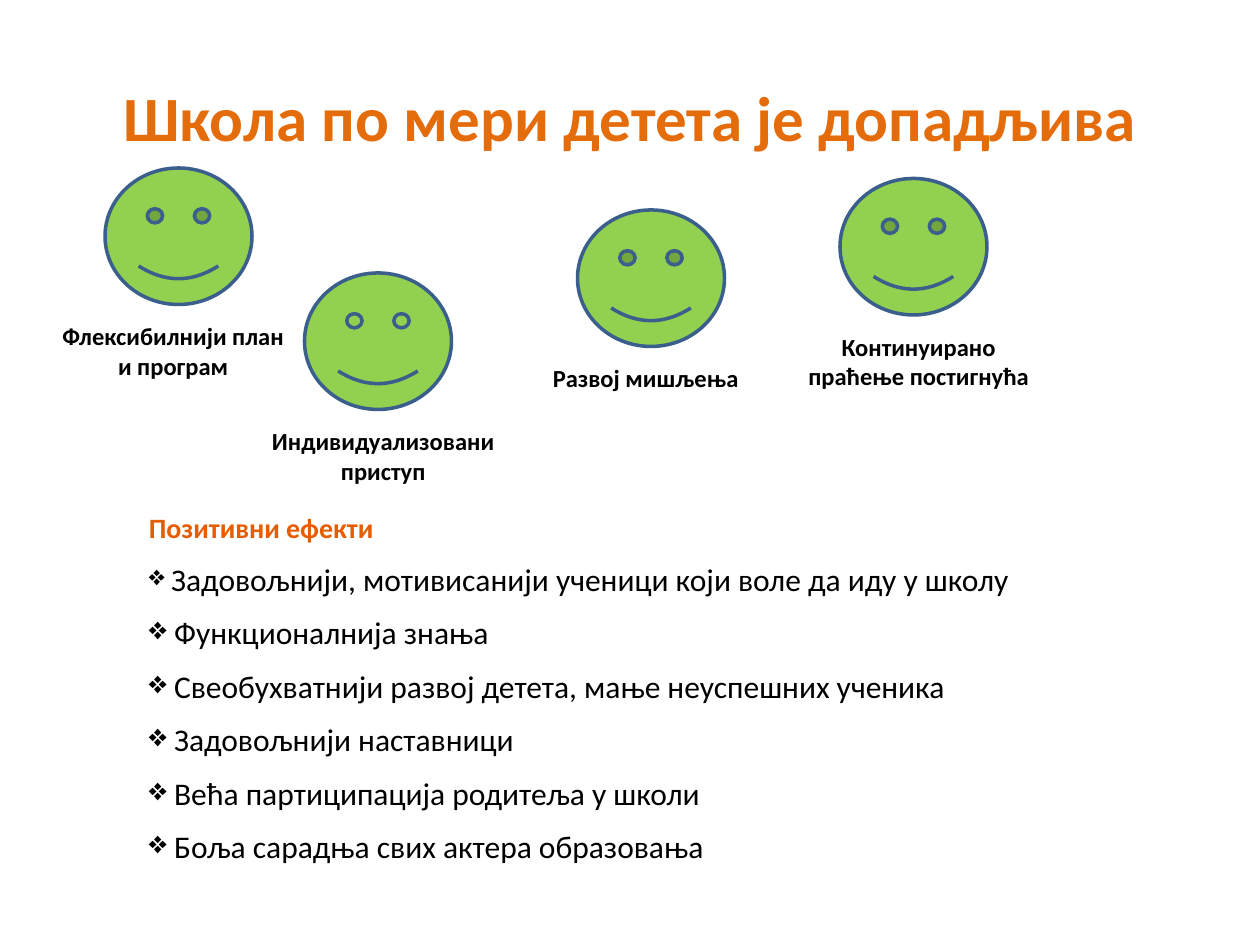
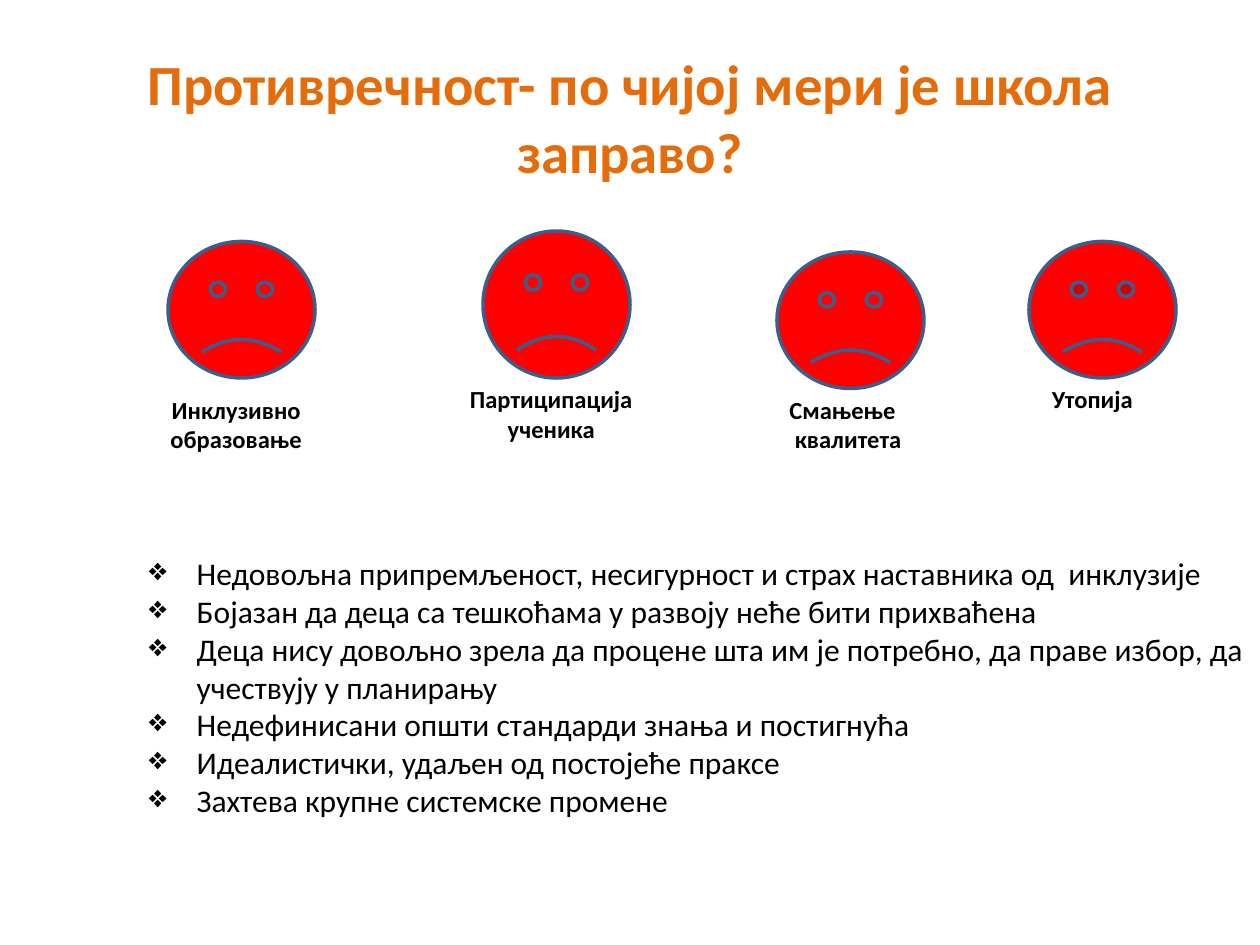
from lxml import etree
from pptx import Presentation
from pptx.dml.color import RGBColor
from pptx.enum.shapes import MSO_SHAPE
from pptx.enum.text import MSO_ANCHOR, PP_ALIGN
from pptx.oxml.ns import qn
from pptx.util import Inches, Pt

WIDTH, HEIGHT = Inches(10), Inches(7.5)
COL, ROW = WIDTH / 120, HEIGHT / 90
FONT = "Calibri"
ORANGE = RGBColor(0xE4, 0x6C, 0x0A)
RUST = RGBColor(0xE6, 0x5D, 0x00)
BLACK = RGBColor(0x00, 0x00, 0x00)
GREEN = RGBColor(0x92, 0xD0, 0x50)
RED = RGBColor(0xFF, 0x00, 0x00)
BLUE = RGBColor(0x3A, 0x5F, 0x8C)
OVAL, SMILEY = MSO_SHAPE.OVAL, MSO_SHAPE.SMILEY_FACE
LEFT, CENTER = PP_ALIGN.LEFT, PP_ALIGN.CENTER
TOP, MIDDLE = MSO_ANCHOR.TOP, MSO_ANCHOR.MIDDLE
SMILE, FROWN = 0.0465, -0.0465
INDENT = Inches(0.38)

TITLE = {"size": Pt(36), "bold": True, "color": ORANGE}
LONG = {**TITLE, "size": Pt(32.4)}
HEAD = {"size": Pt(16), "bold": True, "color": RUST}
LABEL = {"size": Pt(14), "bold": True, "color": BLACK}
BODY = {"size": Pt(18), "bold": False, "color": BLACK}
SMALL = {**BODY, "size": Pt(16)}

GAINS = [
    "Задовољнији, мотивисанији ученици који воле да иду у школу",
    "Функционалнија знања",
    "Свеобухватнији развој детета, мање неуспешних ученика",
    "Задовољнији наставници",
    "Већа партиципација родитеља у школи",
    "Боља сарадња свих актера образовања",
]
DOUBTS = [
    "Недовољна припремљеност, несигурност и страх наставника од  инклузије",
    "Бојазан да деца са тешкоћама у развоју неће бити прихваћена",
    "Деца нису довољно зрела да процене шта им је потребно, да праве избор, "
    "да учествују у планирању",
    "Недефинисани општи стандарди знања и постигнућа",
    "Идеалистички, удаљен од постојеће праксе",
    "Захтева крупне системске промене",
]

# face box, solid, label box, label lines, alignment
HAPPY = [
    ((29, 26, 14, 13), False, (24, 40, 25, 7), ["Индивидуализовани приступ"], CENTER),
    ((80, 17, 14, 13), True, (75, 31, 25, 7), ["Континуирано праћење постигнућа"], CENTER),
    ((55, 20, 14, 13), True, (49, 34, 25, 4), ["Развој мишљења"], CENTER),
    ((10, 16, 14, 13), True, (4, 30, 25, 7), ["Флексибилнији план и програм"], CENTER),
]
SAD = [
    ((16, 23, 14, 13), False, (10, 37, 25, 7), ["Инклузивно образовање"], CENTER),
    ((46, 22, 14, 14), False, (40, 36, 25, 7), ["Партиципација ученика"], CENTER),
    ((74, 24, 14, 13), False, (74, 37, 18, 7), ["Смањење", " квалитета"], LEFT),
    ((98, 23, 14, 13), True, (99, 36, 20, 4), ["Утопија"], LEFT),
]


def place(box):
    """Turn a box in columns and rows into lengths."""
    return [round(part * unit) for part, unit in zip(box, (COL, ROW) * 2)]


def write(para, text, form):
    """Add a run styled from a dict of format values."""
    run = para.add_run()
    run.text = text
    run.font.name = FONT
    for key, value in form.items():
        if key == "color":
            run.font.color.rgb = value
        else:
            setattr(run.font, key, value)


def frame(slide, box, anchor=TOP):
    """Add a wrapping text box and return its frame."""
    text = slide.shapes.add_textbox(*place(box)).text_frame
    text.word_wrap = True
    text.vertical_anchor = anchor
    return text


def block(slide, box, lines, form, align, anchor=TOP):
    """Write lines of one style in a box."""
    text = frame(slide, box, anchor)
    for num, line in enumerate(lines):
        para = text.add_paragraph() if num else text.paragraphs[0]
        para.alignment = align
        write(para, line, form)


def bullet(para, hang=0):
    """Give a paragraph a diamond bullet and a hanging indent."""
    props = para._p.get_or_add_pPr()
    props.set("marL", str(hang))
    props.set("indent", str(-hang))
    etree.SubElement(props, qn("a:buChar")).set("char", "❖")


def shape(slide, kind, box, fill=None, line=None):
    """Add a flat shape with an optional fill and outline."""
    item = slide.shapes.add_shape(kind, *place(box))
    item.shadow.inherit = False
    if fill is None:
        item.fill.background()
    else:
        item.fill.solid()
        item.fill.fore_color.rgb = fill
    if line is None:
        item.line.fill.background()
    else:
        item.line.color.rgb = line
        item.line.width = Pt(2)
    return item


def face(slide, box, fill, mood, solid):
    """Draw a face, either solid or as an outline over a disc."""
    if not solid:
        shape(slide, OVAL, box, fill)
    item = shape(slide, SMILEY, box, fill if solid else None, BLUE)
    item.adjustments[0] = mood


def crowd(slide, people, fill, mood):
    """Draw every face with its label."""
    for box, solid, spot, lines, align in people:
        face(slide, box, fill, mood, solid)
        block(slide, spot, lines, LABEL, align)


def gains(slide, box):
    """List the good effects under a heading."""
    text = frame(slide, box)
    write(text.paragraphs[0], "Позитивни ефекти", HEAD)
    for num, line in enumerate(GAINS):
        para = text.add_paragraph()
        para.space_before = Pt(9)
        bullet(para)
        write(para, " ", BODY if num else SMALL)
        write(para, line, BODY)


def doubts(slide, box):
    """List the doubts with hanging bullets."""
    text = frame(slide, box)
    for num, line in enumerate(DOUBTS):
        para = text.add_paragraph() if num else text.paragraphs[0]
        bullet(para, INDENT)
        write(para, line, BODY)


def start(deck, title, form):
    """Add a blank slide with its title."""
    slide = deck.slides.add_slide(deck.slide_layouts[6])
    block(slide, (6, 3.6, 108, 15), [title], form, CENTER, MIDDLE)
    return slide


def main():
    """Build and save both slides."""
    deck = Presentation()
    deck.slide_width, deck.slide_height = WIDTH, HEIGHT

    slide = start(deck, "Школа по мери детета је допадљива", TITLE)
    crowd(slide, HAPPY, GREEN, SMILE)
    gains(slide, (13, 48, 98, 37))

    slide = start(deck, "Противречност- по чијој мери је школа заправо?", LONG)
    crowd(slide, SAD, RED, FROWN)
    doubts(slide, (13, 52.2, 107, 30))

    deck.save("out.pptx")


if __name__ == "__main__":
    main()
